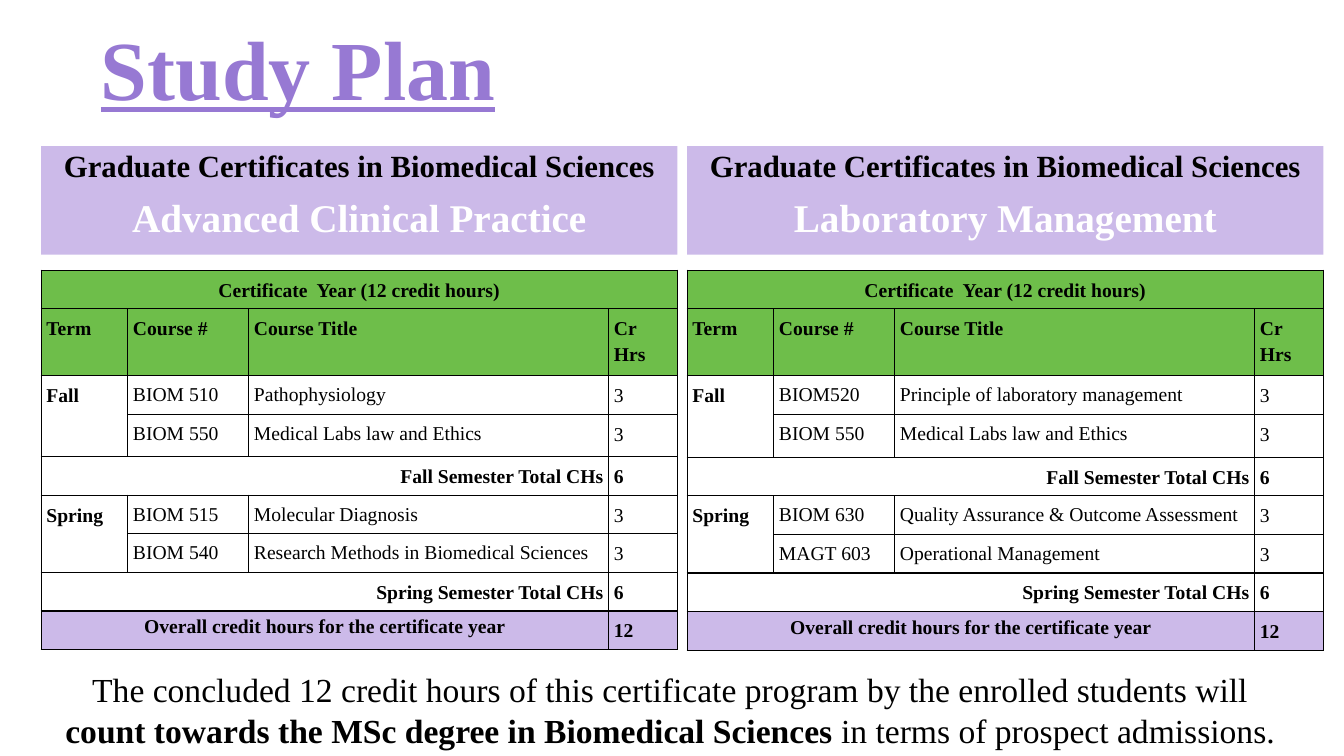
from dataclasses import dataclass

from lxml.etree import SubElement
from pptx import Presentation
from pptx.dml.color import RGBColor as RGB
from pptx.enum.shapes import MSO_SHAPE as SHAPE
from pptx.enum.text import MSO_ANCHOR as ANCHOR, PP_ALIGN as ALIGN
from pptx.oxml.ns import qn
from pptx.util import Cm, Pt


@dataclass(frozen=True)
class Theme:
    font: str = "Times New Roman"
    black: str = "000000"
    white: str = "FFFFFF"
    purple: str = "9779D3"
    lilac: str = "CCBAE9"
    green: str = "6EBE4A"
    title: int = 60
    track: int = 28
    note: int = 24
    program: int = 22
    table: int = 14


class Deck:
    def __init__(self, prs, theme):
        self.theme = theme
        self.slide = prs.slides.add_slide(prs.slide_layouts[6])

    def add_text(self, p, text, size, color=None, para=None, **font):
        for name, value in (para or {}).items():
            setattr(p, name, value)
        r = p.add_run()
        r.text = text
        style = {"name": self.theme.font, "size": Pt(size), **font}
        for name, value in style.items():
            setattr(r.font, name, value)
        r.font.color.rgb = RGB.from_string(color or self.theme.black)

    def text_box(self, left, top, width, height, anchor=ANCHOR.TOP):
        sp = self.slide.shapes.add_textbox(Cm(left), Cm(top), Cm(width), Cm(height))
        tf = sp.text_frame
        tf.word_wrap = True
        tf.vertical_anchor = anchor
        return tf.paragraphs[0]

    def banner(self, left, top, width, height, program, track):
        t = self.theme
        sp = self.slide.shapes.add_shape(
            SHAPE.RECTANGLE, Cm(left), Cm(top), Cm(width), Cm(height))
        sp.shadow.inherit = False
        sp.fill.solid()
        sp.fill.fore_color.rgb = RGB.from_string(t.lilac)
        sp.line.fill.background()
        tf = sp.text_frame
        tf.word_wrap = True
        tf.vertical_anchor = ANCHOR.TOP
        para = {"alignment": ALIGN.CENTER, "line_spacing": 0.9}
        self.add_text(tf.paragraphs[0], program, t.program, para=para, bold=True)
        self.add_text(tf.add_paragraph(), track, t.track, t.white,
                      {**para, "space_before": Pt(10)}, bold=True)

    def cell(self, cell, text="", fill=None, bold=False, **para):
        for side in ("left", "top", "right", "bottom"):
            setattr(cell, f"margin_{side}", Cm(0.13))
        # Black border on every side
        tc_pr = cell._tc.get_or_add_tcPr()
        for side in ("L", "R", "T", "B"):
            ln = SubElement(tc_pr, qn(f"a:ln{side}"), w=str(Pt(1)))
            solid = SubElement(ln, qn("a:solidFill"))
            SubElement(solid, qn("a:srgbClr"), val=self.theme.black)
        if fill:
            cell.fill.solid()
            cell.fill.fore_color.rgb = RGB.from_string(fill)
        else:
            cell.fill.background()
        if text:
            self.add_text(cell.text_frame.paragraphs[0], text, self.theme.table,
                          para={"line_spacing": 1.2, **para}, bold=bold)

    def table(self, left, top, col_widths, row_heights, rows, merges):
        frame = self.slide.shapes.add_table(
            len(rows), len(col_widths), Cm(left), Cm(top),
            Cm(sum(col_widths)), Cm(sum(row_heights)))
        tbl = frame.table
        tbl.first_row = tbl.horz_banding = False
        for col, width in zip(tbl.columns, col_widths):
            col.width = Cm(width)
        for row, height in zip(tbl.rows, row_heights):
            row.height = Cm(height)
        for r, row in enumerate(rows):
            for c, style in enumerate(row):
                self.cell(tbl.cell(r, c), **style)
        for first, last in merges:
            tbl.cell(*first).merge(tbl.cell(*last))


def plan_rows(theme, terms):
    """Rows of one certificate: heading, two terms with totals, overall."""
    head = {"fill": theme.green, "bold": True}
    overall = {"fill": theme.lilac, "bold": True}
    rows = [
        [{"text": "Certificate  Year (12 credit hours)",
          "alignment": ALIGN.CENTER, **head}] + [head] * 3,
        [{"text": t, **head} for t in ("Term", "Course #", "Course Title", "Cr Hrs")],
    ]
    for term, courses in terms.items():
        for i, (number, title) in enumerate(courses):
            rows.append([
                {"text": "" if i else term, "bold": True},
                {"text": number, "line_spacing": 1.15},
                {"text": title, "line_spacing": 1.15, "space_after": Pt(10)},
                {"text": "3"},
            ])
        rows.append([{"text": f"{term} Semester Total CHs", "bold": True,
                      "alignment": ALIGN.RIGHT}, {}, {},
                     {"text": "6", "bold": True}])
    rows.append([{"text": "Overall credit hours for the certificate year",
                  "alignment": ALIGN.CENTER, "line_spacing": 1.0, **overall},
                 overall, overall, {"text": "12", **overall}])
    return rows


COLS = [2.18, 3.05, 9.07, 1.73]
MERGES = [((0, 0), (0, 3)), ((2, 0), (3, 0)), ((4, 0), (4, 2)),
          ((5, 0), (6, 0)), ((7, 0), (7, 2)), ((8, 0), (8, 2))]
LEFT, PITCH = 1.04, 16.28

# Track, height of plain rows, heading row and fourth row, courses by term
TRACKS = [
    ("Advanced Clinical Practice", 0.95, 1.59, 1.07, {
        "Fall": [("BIOM 510", "Pathophysiology"),
                 ("BIOM 550", "Medical Labs law and Ethics")],
        "Spring": [("BIOM 515", "Molecular Diagnosis"),
                   ("BIOM 540", "Research Methods in Biomedical Sciences")]}),
    ("Laboratory Management", 0.97, 1.69, 1.08, {
        "Fall": [("BIOM520", "Principle of laboratory management"),
                 ("BIOM 550", "Medical Labs law and Ethics")],
        "Spring": [("BIOM 630", "Quality Assurance & Outcome Assessment"),
                   ("MAGT 603", "Operational Management")]}),
]


def main():
    prs = Presentation()
    prs.slide_width, prs.slide_height = Cm(33.87), Cm(19.05)
    t = Theme()
    s = Deck(prs, t)

    # Title
    p = s.text_box(2.29, 0, 29.21, 3.68, ANCHOR.MIDDLE)
    s.add_text(p, "Study Plan", t.title, t.purple, {"line_spacing": 0.9},
               bold=True, underline=True)

    # Banner and study plan of each certificate
    for i, (track, plain, heading, fourth, terms) in enumerate(TRACKS):
        left = LEFT + i * PITCH
        s.banner(left, 3.68, sum(COLS), 2.74,
                 "Graduate Certificates in Biomedical Sciences", track)
        heights = [plain, heading, plain, fourth] + [plain] * 5
        s.table(left, 6.81, COLS, heights, plan_rows(t, terms), MERGES)

    # Closing note
    p = s.text_box(LEFT, 16.74, 31.7, 2.31)
    p.alignment = ALIGN.CENTER
    for text, bold in (
        ("The concluded 12 credit hours of this certificate program "
         "by the enrolled students will ", False),
        ("count towards the MSc degree in Biomedical Sciences ", True),
        ("in terms of prospect admissions.", False),
    ):
        s.add_text(p, text, t.note, bold=bold)

    prs.save("out.pptx")


if __name__ == "__main__":
    main()
